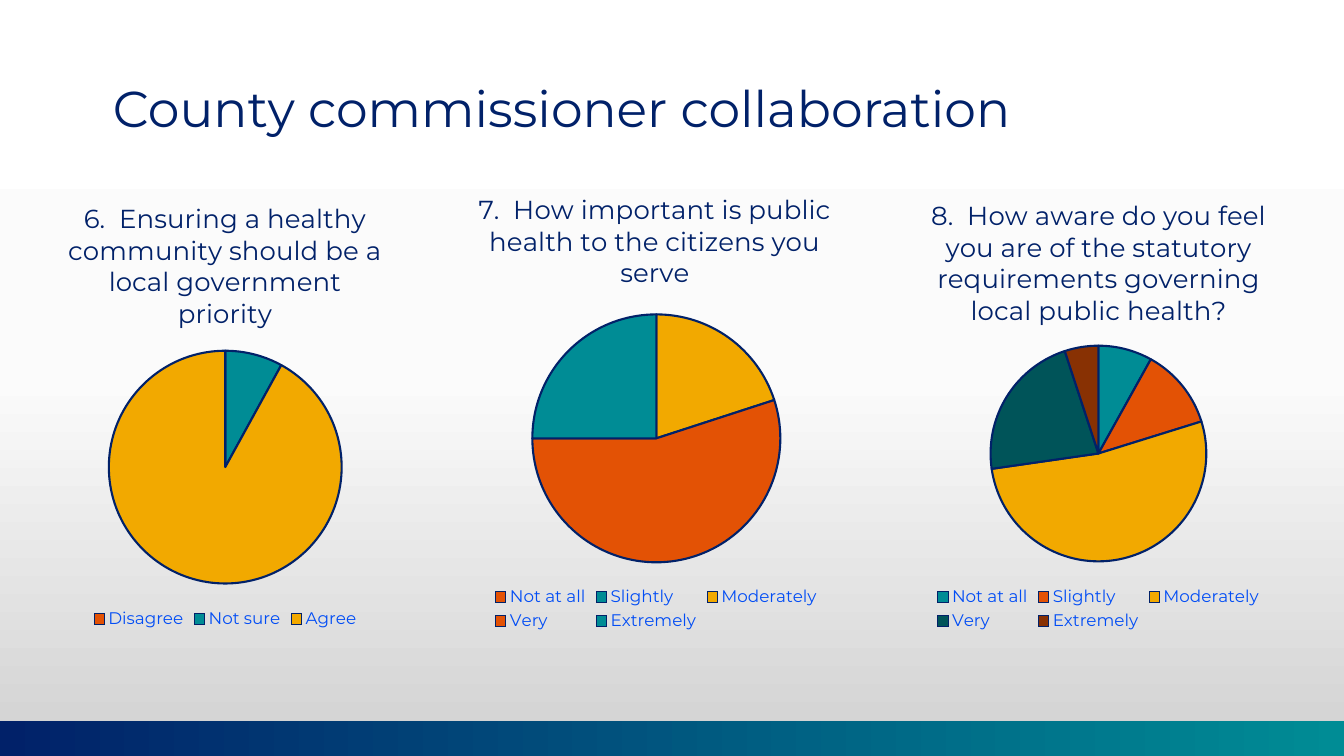
from dataclasses import dataclass

from lxml import etree
from pptx import Presentation
from pptx.chart.data import CategoryChartData
from pptx.dml.color import RGBColor
from pptx.enum.chart import XL_CHART_TYPE as ChartType, XL_LEGEND_POSITION as LegendPosition
from pptx.enum.shapes import MSO_SHAPE as Shape
from pptx.enum.text import MSO_ANCHOR as Anchor, PP_ALIGN as Align
from pptx.oxml import parse_xml
from pptx.oxml.ns import qn
from pptx.util import Inches, Pt


@dataclass(frozen=True)
class Theme:
    font: str = "Montserrat"
    navy: str = "012169"
    teal: str = "008C95"
    orange: str = "E35205"
    gold: str = "F2A900"
    dark_teal: str = "005459"
    brown: str = "883103"
    legend_blue: str = "024DF5"
    backdrop: tuple[tuple[int, str], ...] = ((0, "FFFFFF"), (50, "FBFBFB"), (100, "D1D1D1"))
    title_size: float = 36
    question_size: float = 18.6
    legend_size: float = 12
    outline: float = 1.5


@dataclass(frozen=True)
class Box:
    left: float
    top: float
    width: float
    height: float

    def place(self) -> tuple:
        return tuple(Inches(v) for v in (self.left, self.top, self.width, self.height))


@dataclass(frozen=True)
class Survey:
    question: str
    answers: tuple[str, ...]
    shares: tuple[int, ...]
    colours: tuple[str, ...]
    frame: Box
    question_left: float
    question_top: float
    pie_top: float
    pie_size: float


THEME = Theme()
WIDTH, HEIGHT = 13.33, 7.5
BAR_HEIGHT = 0.35
SCALE = ("Not at all", "Slightly", "Moderately", "Very", "Extremely")

SURVEYS = (
    Survey("6.  Ensuring a healthy community should be a local government priority",
           ("Disagree", "Not sure", "Agree"), (0, 8, 92),
           (THEME.orange, THEME.teal, THEME.gold),
           Box(0.21, 1.8, 4.05, 4.48), 0.63, 1.94, 3.48, 2.31),
    Survey("7.  How important is public health to the citizens you serve",
           SCALE, (0, 0, 20, 55, 25),
           (THEME.orange, THEME.teal, THEME.gold, THEME.orange, THEME.teal),
           Box(4.26, 1.8, 4.5, 4.5), 4.7, 1.85, 3.12, 2.46),
    Survey("8.  How aware do you feel you are of the statutory requirements "
           "governing local public health?",
           SCALE, (8, 12, 52, 22, 5),
           (THEME.teal, THEME.orange, THEME.gold, THEME.dark_teal, THEME.brown),
           Box(8.46, 1.8, 4.87, 4.5), 9.19, 1.91, 3.43, 2.14),
)


def style_font(font, size: float, colour: str) -> None:
    font.name = THEME.font
    font.size = Pt(size)
    font.bold = False
    font.color.rgb = RGBColor.from_string(colour)


def set_gradient(fill, stops: tuple[tuple[int, str], ...], angle: int) -> None:
    """Fill with any number of stops; the angle runs clockwise in degrees."""
    fill.gradient()
    gradient = fill._fill._gradFill
    stop_list = gradient.find(qn("a:gsLst"))
    for stop in list(stop_list):
        stop_list.remove(stop)
    for position, colour in stops:
        stop = etree.SubElement(stop_list, qn("a:gs"), pos=str(position * 1000))
        etree.SubElement(stop, qn("a:srgbClr"), val=colour)
    fill.gradient_angle = (360 - angle) % 360


def set_layout(parent, index: int, inner: bool = False, **fractions: float) -> None:
    """Fix a chart part at fractions of the chart frame."""
    for old in parent.findall(qn("c:layout")):
        parent.remove(old)
    layout = parse_xml(
        '<c:layout xmlns:c="http://schemas.openxmlformats.org/drawingml/2006/chart">'
        "<c:manualLayout/></c:layout>")
    manual = layout[0]
    if inner:
        etree.SubElement(manual, qn("c:layoutTarget"), val="inner")
    for mode in ("xMode", "yMode"):
        etree.SubElement(manual, qn(f"c:{mode}"), val="edge")
    for name, value in fractions.items():
        etree.SubElement(manual, qn(f"c:{name}"), val=f"{value:.4f}")
    parent.insert(index, layout)


def add_title(page, text: str) -> None:
    title = page.shapes.title
    title.left, title.top, title.width, title.height = Box(1.02, 0.78, 11.28, 0.97).place()
    title.text_frame.vertical_anchor = Anchor.TOP
    title.text_frame.word_wrap = True
    para = title.text_frame.paragraphs[0]
    para.alignment = Align.LEFT
    para.line_spacing = 0.9
    span = para.add_run()
    span.text = text
    style_font(span.font, THEME.title_size, THEME.navy)


def add_footer_bar(page) -> None:
    box = Box(0, HEIGHT - BAR_HEIGHT, WIDTH, BAR_HEIGHT)
    bar = page.shapes.add_shape(Shape.RECTANGLE, *box.place())
    bar.shadow.inherit = False
    bar.line.fill.background()
    set_gradient(bar.fill, ((0, THEME.navy), (100, THEME.teal)), 0)


def add_survey(page, survey: Survey) -> None:
    data = CategoryChartData()
    data.categories = survey.answers
    data.add_series("Series 1", survey.shares)
    frame = survey.frame
    chart = page.shapes.add_chart(ChartType.PIE, *frame.place(), data).chart
    style_font(chart.font, 10, THEME.navy)

    # Question above the pie
    chart.has_title = True
    span = chart.chart_title.text_frame.paragraphs[0].add_run()
    span.text = survey.question
    style_font(span.font, THEME.question_size, THEME.navy)
    set_layout(chart.chart_title._element, 1,
               x=(survey.question_left - frame.left) / frame.width,
               y=(survey.question_top - frame.top) / frame.height)

    # Pie centred in its frame
    width = survey.pie_size / frame.width
    set_layout(chart._chartSpace.chart.plotArea, 0, inner=True,
               x=(1 - width) / 2, y=(survey.pie_top - frame.top) / frame.height,
               w=width, h=survey.pie_size / frame.height)
    plot = chart.plots[0]
    plot.vary_by_categories = True
    for index, colour in enumerate(survey.colours):
        piece = plot.series[0].points[index].format
        piece.fill.solid()
        piece.fill.fore_color.rgb = RGBColor.from_string(colour)
        piece.line.color.rgb = RGBColor.from_string(THEME.navy)
        piece.line.width = Pt(THEME.outline)

    # Legend
    chart.has_legend = True
    chart.legend.position = LegendPosition.BOTTOM
    chart.legend.include_in_layout = False
    style_font(chart.legend.font, THEME.legend_size, THEME.legend_blue)


def main() -> None:
    deck = Presentation()
    deck.slide_width, deck.slide_height = Inches(WIDTH), Inches(HEIGHT)
    page = deck.slides.add_slide(deck.slide_layouts.get_by_name("Title Only"))
    set_gradient(page.background.fill, THEME.backdrop, 90)
    add_title(page, "County commissioner collaboration")
    add_footer_bar(page)
    for survey in SURVEYS:
        add_survey(page, survey)
    deck.save("out.pptx")


if __name__ == "__main__":
    main()
